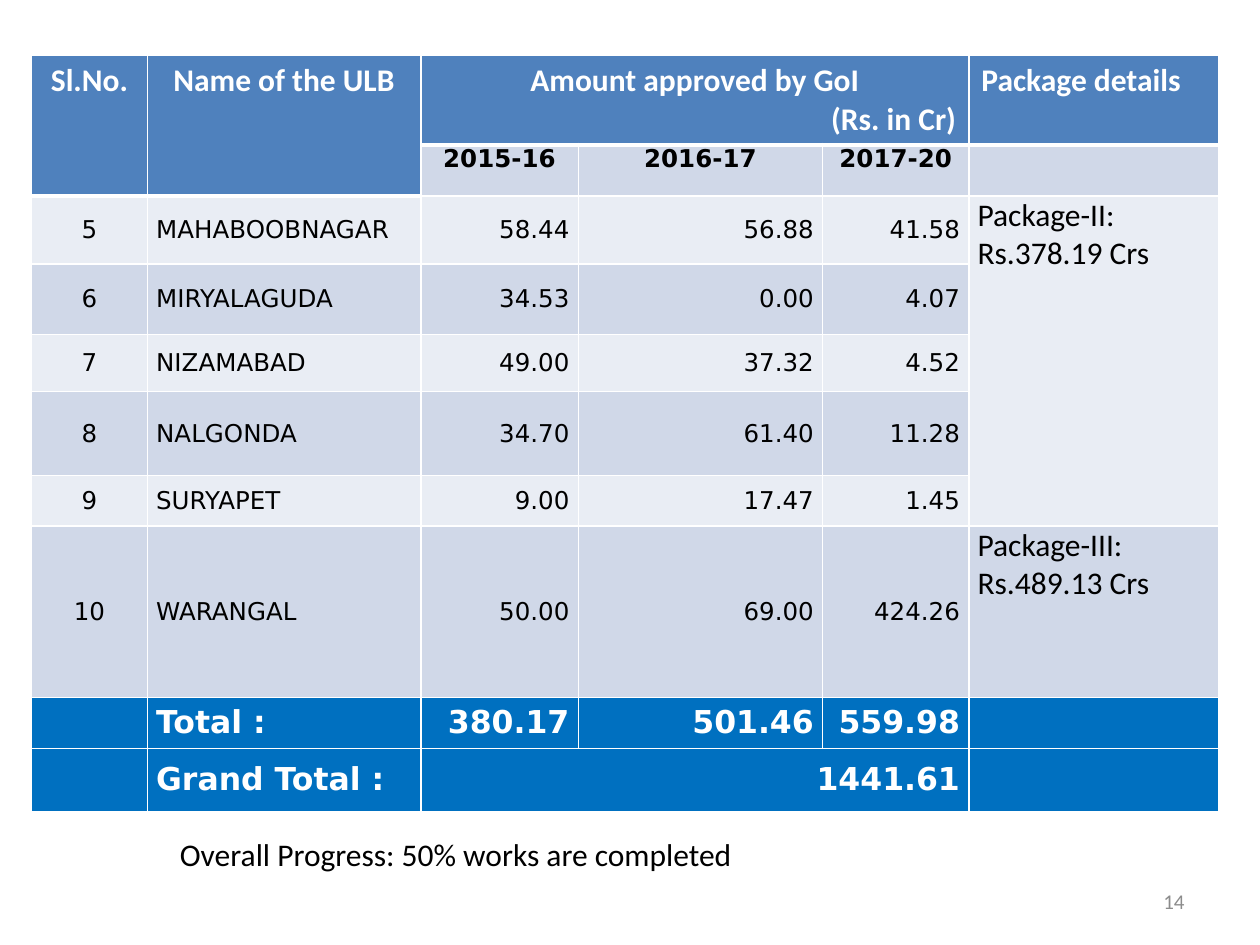
from lxml import etree
from pptx import Presentation
from pptx.dml.color import RGBColor
from pptx.enum.text import MSO_ANCHOR, PP_ALIGN
from pptx.oxml.ns import qn
from pptx.util import Inches, Pt

COLORS = {
    "header": "4F81BD", "band": "D0D8E8", "light": "E9EDF4", "total": "0070C0",
    "white": "FFFFFF", "black": "000000", "gray": "8C8C8C",
}
HEADER = ["Sl.No.", "Name of the ULB", "Amount approved by GoI\n(Rs. in Cr)", "", "",
          "Package details"]
YEARS = ["", "", "2015-16", "2016-17", "2017-20", ""]
ULBS = [
    ["5", "MAHABOOBNAGAR", "58.44", "56.88", "41.58", "Package-II: Rs.378.19 Crs"],
    ["6", "MIRYALAGUDA", "34.53", "0.00", "4.07", ""],
    ["7", "NIZAMABAD", "49.00", "37.32", "4.52", ""],
    ["8", "NALGONDA", "34.70", "61.40", "11.28", ""],
    ["9", "SURYAPET", "9.00", "17.47", "1.45", ""],
    ["10", "WARANGAL", "50.00", "69.00", "424.26", "Package-III: Rs.489.13 Crs"],
]
TOTALS = [
    ["", "Total :", "380.17", "501.46", "559.98", ""],
    ["", "Grand Total :", "1441.61", "", "", ""],
]
ROWS = [HEADER, YEARS, *ULBS, *TOTALS]
COL_WIDTHS = [0.92, 2.17, 1.25, 1.94, 1.16, 1.98]
ROW_HEIGHTS = [0.67, 0.38, 0.54, 0.56, 0.45, 0.67, 0.4, 1.36, 0.38, 0.5]
MERGES = [((0, 0), (1, 0)), ((0, 1), (1, 1)), ((0, 2), (0, 4)),
          ((2, 5), (6, 5)), ((9, 2), (9, 4))]
FIRST_ULB, FIRST_TOTAL = 2, 2 + len(ULBS)
PACKAGE_COL = 5
L, C, R, J = PP_ALIGN.LEFT, PP_ALIGN.CENTER, PP_ALIGN.RIGHT, PP_ALIGN.JUSTIFY
COL_ALIGNS = [C, L, R, R, R, L]


def write(tf, text, size=18, font="Calibri", color="black", bold=False, aligns=(L,)):
    for i, line in enumerate(text.split("\n")):
        p = tf.paragraphs[0] if i == 0 else tf.add_paragraph()
        p.alignment = aligns[i]
        r = p.add_run()
        r.text = line
        r.font.size = Pt(size)
        r.font.name = font
        r.font.bold = bold
        r.font.color.rgb = RGBColor.from_string(COLORS[color])


def set_borders(cell, top, bottom):
    tc_pr = cell._tc.get_or_add_tcPr()
    for side, width in (("L", 1), ("R", 1), ("T", top), ("B", bottom)):
        ln = etree.SubElement(tc_pr, qn(f"a:ln{side}"), w=str(Pt(width)))
        fill = etree.SubElement(ln, qn("a:solidFill"))
        etree.SubElement(fill, qn("a:srgbClr"), val=COLORS["white"])


def row_fill(row):
    if row == 0:
        return "header"
    if row >= FIRST_TOTAL:
        return "total"
    return "band" if row % 2 else "light"


def text_format(row, col):
    if row == 0:
        aligns = {2: (C, R), PACKAGE_COL: (L,)}.get(col, (C,))
        return dict(color="white", bold=True, aligns=aligns)
    if row < FIRST_ULB:
        return dict(size=14, font="DejaVu Sans", bold=True, aligns=(C,))
    if row >= FIRST_TOTAL:
        return dict(font="DejaVu Sans", color="white", bold=True, aligns=(COL_ALIGNS[col],))
    if col == PACKAGE_COL:
        return dict(aligns=(J if row == FIRST_TOTAL - 1 else L,))
    return dict(size=14, font="DejaVu Sans", aligns=(COL_ALIGNS[col],))


def thick_below(row, col):
    return row == (1 if col < 2 else 0)


def add_ulb_table(s):
    table = s.shapes.add_table(len(ROWS), len(COL_WIDTHS), Inches(0.25), Inches(0.44),
                               Inches(sum(COL_WIDTHS)), Inches(sum(ROW_HEIGHTS))).table
    for col, width in zip(table.columns, COL_WIDTHS):
        col.width = Inches(width)
    for row, height in zip(table.rows, ROW_HEIGHTS):
        row.height = Inches(height)
    for start, end in MERGES:
        table.cell(*start).merge(table.cell(*end))
    for i, texts in enumerate(ROWS):
        for j, text in enumerate(texts):
            cell = table.cell(i, j)
            origin_thick = (i, j) in ((0, 0), (0, 1))
            set_borders(cell, 3 if thick_below(i - 1, j) else 1,
                        3 if thick_below(i, j) or origin_thick else 1)
            cell.fill.solid()
            fill = "header" if i == 1 and j < 2 else row_fill(i)
            cell.fill.fore_color.rgb = RGBColor.from_string(COLORS[fill])
            if not text:
                continue
            if i > 0:
                cell.margin_left = cell.margin_right = Inches(0.07)
                cell.margin_top = cell.margin_bottom = 0
            if i >= FIRST_ULB and j != PACKAGE_COL:
                cell.vertical_anchor = MSO_ANCHOR.MIDDLE
            write(cell.text_frame, text, **text_format(i, j))


def add_text(s, box, text, anchor=MSO_ANCHOR.TOP, wrap=True, **fmt):
    tf = s.shapes.add_textbox(*(Inches(v) for v in box)).text_frame
    tf.word_wrap = wrap
    tf.vertical_anchor = anchor
    write(tf, text, **fmt)


def main():
    prs = Presentation()
    prs.slide_width, prs.slide_height = Inches(10), Inches(7.5)
    s = prs.slides.add_slide(prs.slide_layouts[6])
    add_ulb_table(s)
    add_text(s, (7.17, 6.95, 2.33, 0.4), "14", anchor=MSO_ANCHOR.MIDDLE,
             size=12, color="gray", aligns=(R,))
    add_text(s, (1.33, 6.58, 4.8, 0.4), "Overall Progress: 50% works are completed",
             wrap=False)
    prs.save("out.pptx")


if __name__ == "__main__":
    main()
